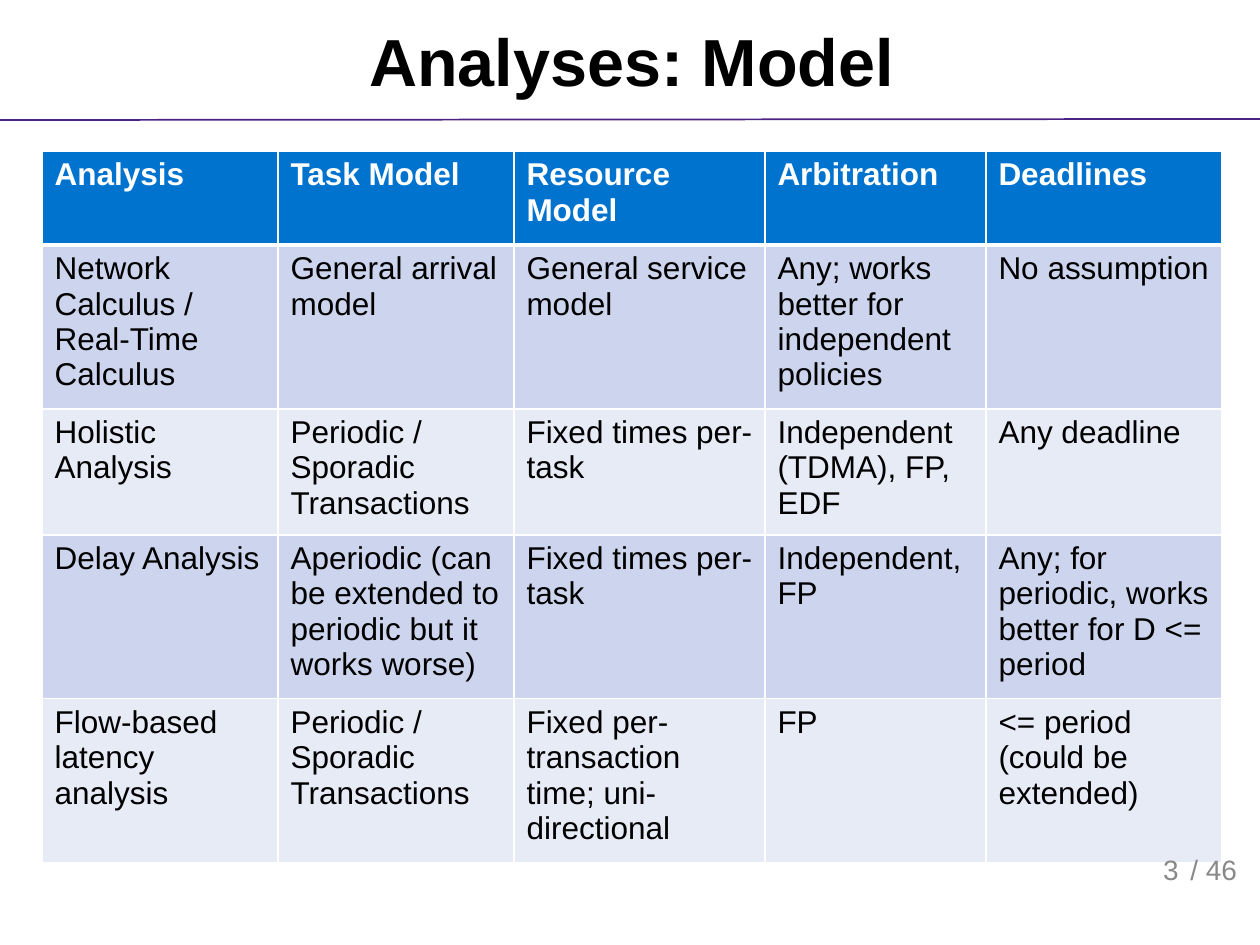
"""Build the slide that compares the models behind four timing analyses."""
from dataclasses import dataclass

from lxml import etree
from pptx import Presentation
from pptx import util as u
from pptx.dml.color import RGBColor
from pptx.enum import shapes, text
from pptx.oxml import ns


@dataclass(frozen=True)
class Theme:
    font: str = "Arial"
    ink: str = "000000"
    paper: str = "FFFFFF"
    rule: str = "4A2384"
    muted: str = "898989"
    header: str = "0073CF"
    bands: tuple = ("CCD5ED", "E7EBF6")
    title_size: int = 38
    table_size: int = 18
    footer_size: int = 16


def px(length):
    return u.Emu(round(length * 914400 / 126))


class SlideBuilder:
    def __init__(self, page, theme):
        self.page = page
        self.theme = theme

    def style(self, frame, size, color, bold=False, align=text.PP_ALIGN.LEFT):
        for para in frame.paragraphs:
            para.alignment = align
            for span in para.runs:
                span.font.name = self.theme.font
                span.font.size = u.Pt(size)
                span.font.bold = bold
                span.font.color.rgb = RGBColor.from_string(color)

    def label(self, words, area, anchor, size, color, **look):
        box = self.page.shapes.add_textbox(*map(px, area))
        frame = box.text_frame
        frame.word_wrap = True
        frame.vertical_anchor = anchor
        frame.text = words
        self.style(frame, size, color, **look)

    def rule(self, start, end):
        line = self.page.shapes.add_connector(
            shapes.MSO_CONNECTOR.STRAIGHT, *map(px, start + end))
        line.line.color.rgb = RGBColor.from_string(self.theme.rule)
        line.line.width = u.Pt(1)
        etree.SubElement(line._element.spPr, ns.qn("a:effectLst"))

    def border(self, cell, side, width):
        properties = cell._tc.get_or_add_tcPr()
        edge = etree.SubElement(properties, ns.qn(f"a:ln{side}"), w=str(u.Pt(width)))
        fill = etree.SubElement(edge, ns.qn("a:solidFill"))
        etree.SubElement(fill, ns.qn("a:srgbClr"), val=self.theme.paper)

    def cell(self, cell, words, row):
        theme = self.theme
        is_header = row == 0
        widths = {"L": 1, "R": 1, "T": 3 if row == 1 else 1, "B": 3 if is_header else 1}
        for side, width in widths.items():
            self.border(cell, side, width)
        cell.fill.solid()
        color = theme.header if is_header else theme.bands[(row - 1) % 2]
        cell.fill.fore_color.rgb = RGBColor.from_string(color)
        cell.text_frame.text = words
        self.style(cell.text_frame, theme.table_size,
                   theme.paper if is_header else theme.ink, bold=is_header)

    def table(self, rows, left, top, widths, heights):
        area = (left, top, sum(widths), sum(heights))
        grid = self.page.shapes.add_table(len(rows), len(widths), *map(px, area)).table
        for column, width in zip(grid.columns, widths):
            column.width = px(width)
        for row, (entries, height) in enumerate(zip(rows, heights)):
            grid.rows[row].height = px(height)
            for column, words in enumerate(entries):
                self.cell(grid.cell(row, column), words, row)


ANALYSES = [
    ("Analysis", "Task Model", "Resource Model", "Arbitration", "Deadlines"),
    ("Network Calculus / Real-Time Calculus", "General arrival model",
     "General service model", "Any; works better for independent policies",
     "No assumption"),
    ("Holistic Analysis", "Periodic / Sporadic Transactions", "Fixed times per-task",
     "Independent (TDMA), FP, EDF", "Any deadline"),
    ("Delay Analysis", "Aperiodic (can be extended to periodic but it works worse)",
     "Fixed times per-task", "Independent, FP",
     "Any; for periodic, works better for D <= period"),
    ("Flow-based latency analysis", "Periodic / Sporadic Transactions",
     "Fixed per-transaction time; uni-directional", "FP",
     "<= period (could be extended)"),
]


def main():
    deck = Presentation()
    deck.slide_width, deck.slide_height = px(1260), px(945)
    theme = Theme()
    slide = SlideBuilder(deck.slides.add_slide(deck.slide_layouts[6]), theme)

    slide.rule((0, 120), (1260, 119))
    slide.label("Analyses: Model", (42, 0, 1180, 119), text.MSO_ANCHOR.MIDDLE,
                theme.title_size, theme.ink, bold=True, align=text.PP_ALIGN.CENTER)
    slide.table(ANALYSES, 42, 151, (236, 236, 251, 221, 236), (94, 154, 118, 154, 154))
    footer = (text.MSO_ANCHOR.BOTTOM, theme.footer_size, theme.muted)
    slide.label("3", (1057, 842, 134, 50), *footer, align=text.PP_ALIGN.RIGHT)
    slide.label("/ 46", (1178, 842, 134, 50), *footer)

    deck.save("out.pptx")


if __name__ == "__main__":
    main()
